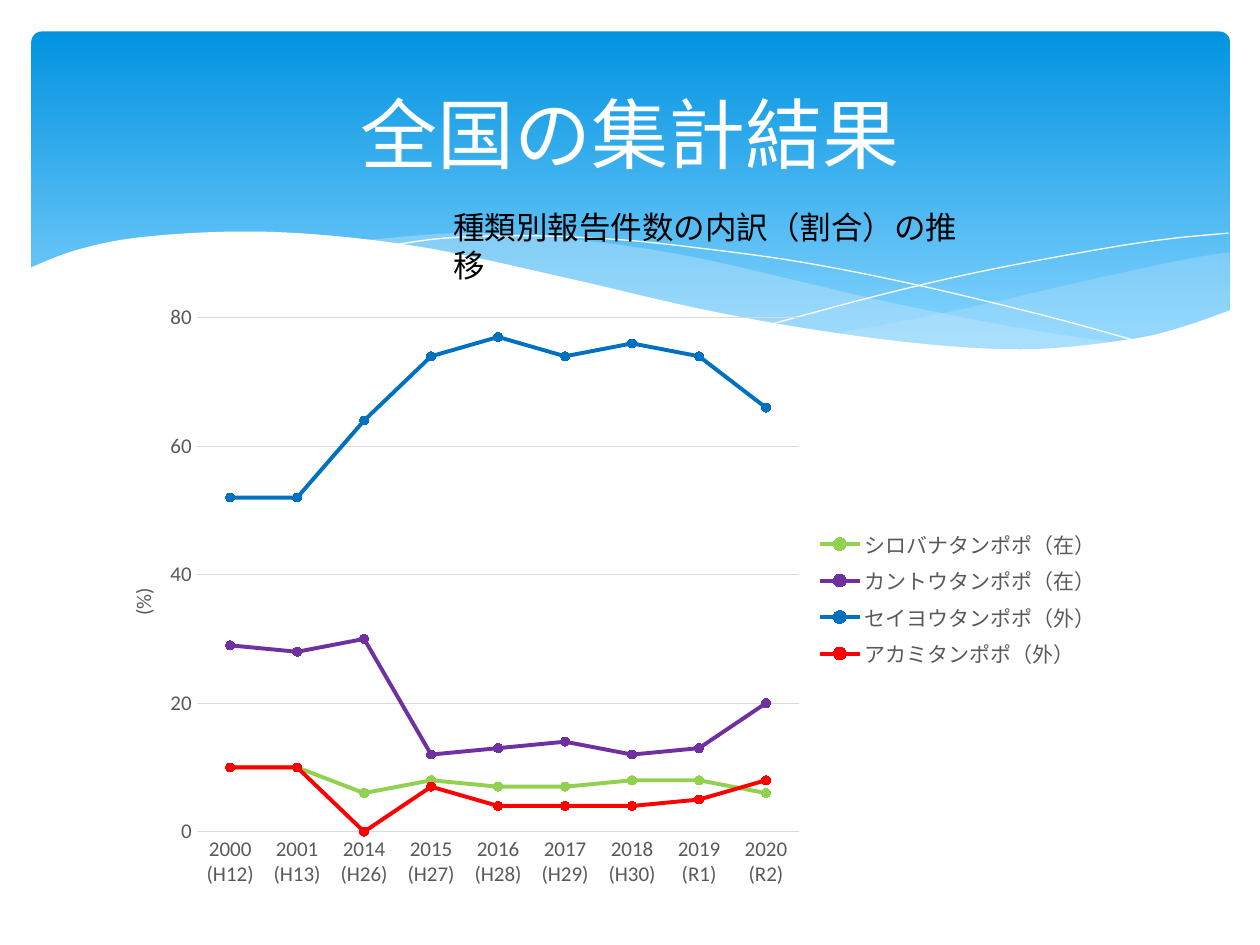
from lxml import etree
from pptx import Presentation
from pptx.chart.data import CategoryChartData
from pptx.dml.color import RGBColor
from pptx.enum.chart import XL_CHART_TYPE, XL_LEGEND_POSITION, XL_MARKER_STYLE, XL_TICK_MARK
from pptx.enum.shapes import MSO_SHAPE
from pptx.enum.text import MSO_ANCHOR, PP_ALIGN
from pptx.oxml import parse_xml
from pptx.oxml.ns import nsdecls, qn
from pptx.util import Inches, Pt

THEME = {
    "font": "Calibri",
    "title_size": Pt(44), "subtitle_size": Pt(18), "chart_size": Pt(12),
    "white": RGBColor.from_string("FFFFFF"), "black": RGBColor.from_string("000000"),
    "sky_top": RGBColor.from_string("0293E0"), "sky_bottom": RGBColor.from_string("83D3FE"),
    "wave": RGBColor.from_string("C6E7FC"),
    "label": RGBColor.from_string("595959"), "grid": RGBColor.from_string("D9D9D9"),
}

presentation = Presentation()
presentation.slide_width, presentation.slide_height = Inches(10), Inches(7.5)
slide = presentation.slides.add_slide(presentation.slide_layouts[6])

# Grid of 10 columns by 7.5 rows
column = presentation.slide_width / 10
row = presentation.slide_height / 7.5


def place(left, top, width, height):
    return [round(value * unit) for value, unit in zip((left, top, width, height), (column, row) * 2)]


def smooth(knots, steps=6):
    """Catmull-Rom curve through the knots, in slide units."""
    padded = [knots[0], *knots, knots[-1]]
    points = []
    for a, b, c, d in zip(padded, padded[1:], padded[2:], padded[3:]):
        for t in (step / steps for step in range(steps)):
            points.append([
                (2 * q + (r - p) * t + (2 * p - 5 * q + 4 * r - s) * t ** 2
                 + (3 * q - p - 3 * r + s) * t ** 3) / 2
                for p, q, r, s in zip(a, b, c, d)])
    return [(round(x * column), round(y * row)) for x, y in [*points, knots[-1]]]


# Gradient banner
banner = slide.shapes.add_shape(MSO_SHAPE.ROUNDED_RECTANGLE, *place(0.25, 0.25, 9.51, 2.7))
banner.adjustments[0] = 0.03
banner.shadow.inherit = False
banner.line.fill.background()
banner.fill.gradient()
banner.fill.gradient_angle = 270
for stop, color, position in zip(banner.fill.gradient_stops, ("sky_top", "sky_bottom"), (0, 0.9)):
    stop.color.rgb, stop.position = THEME[color], position

# Waves: each outline is a chain of curves; no fill means a thin white line
waves = [
    {"fill": "wave", "alpha": 29, "curves": [
        [(9.76, 2), (9.35, 2.07), (8.61, 2.23), (7.79, 2.42), (7.06, 2.57), (6.61, 2.65)],
        [(6.61, 2.65), (7.19, 2.72), (7.69, 2.77), (8.14, 2.78), (8.63, 2.75),
         (9.13, 2.67), (9.49, 2.57), (9.76, 2.47)]]},
    {"fill": "wave", "alpha": 40, "curves": [
        [(8.93, 2.73), (8.07, 2.6), (7.06, 2.4), (6.29, 2.22), (5.55, 2.05), (4.89, 1.94),
         (4.2, 1.87), (3.61, 1.85), (2.86, 1.91)],
        [(2.86, 1.91), (3.62, 2.03), (4.49, 2.22), (5.3, 2.4), (6.01, 2.55), (6.8, 2.68),
         (7.48, 2.76), (8.07, 2.78), (8.57, 2.77), (8.93, 2.73)]]},
    {"fill": None, "curves": [
        [(3.09, 1.95), (3.53, 1.89), (4.16, 1.87), (4.89, 1.9), (5.56, 1.97), (6.36, 2.08),
         (7.27, 2.26), (8.31, 2.51), (9.07, 2.72)]]},
    {"fill": None, "curves": [
        [(6.13, 2.57), (6.95, 2.35), (7.76, 2.16), (8.66, 1.99), (9.24, 1.9), (9.75, 1.85)]]},
    {"fill": "white", "alpha": 100, "curves": [
        [(0.23, 2.13), (0.59, 1.99), (1.06, 1.89), (1.77, 1.84), (2.5, 1.86), (3.4, 1.97),
         (4.47, 2.2), (5.55, 2.45), (6.48, 2.62), (7.44, 2.74), (8.23, 2.77), (8.99, 2.69),
         (9.4, 2.59), (9.77, 2.46)],
        [(9.77, 3.29), (0.23, 3.29)]]},
]
for wave in waves:
    points = [point for curve in wave["curves"] for point in smooth(curve)]
    builder = slide.shapes.build_freeform(*points[0])
    builder.add_line_segments(points[1:], close=wave["fill"] is not None)
    shape = builder.convert_to_shape()
    shape.shadow.inherit = False
    if wave["fill"]:
        shape.fill.solid()
        shape.fill.fore_color.rgb = THEME[wave["fill"]]
        shape.line.fill.background()
        color = shape.fill._xPr.find(qn("a:solidFill"))[0]
        etree.SubElement(color, qn("a:alpha"), val=str(wave["alpha"] * 1000))
    else:
        shape.fill.background()
        shape.line.color.rgb = THEME["white"]
        shape.line.width = Pt(0)

# Line chart
data = CategoryChartData(number_format="0")
data.categories = [
    f"{year}\n({era})" for year, era in (
        (2000, "H12"), (2001, "H13"), (2014, "H26"), (2015, "H27"), (2016, "H28"),
        (2017, "H29"), (2018, "H30"), (2019, "R1"), (2020, "R2"))]
dandelions = [
    ("シロバナタンポポ（在）", "92D050", (10, 10, 6, 8, 7, 7, 8, 8, 6)),
    ("カントウタンポポ（在）", "7030A0", (29, 28, 30, 12, 13, 14, 12, 13, 20)),
    ("セイヨウタンポポ（外）", "0070C0", (52, 52, 64, 74, 77, 74, 76, 74, 66)),
    ("アカミタンポポ（外）", "FF0000", (10, 10, 0, 7, 4, 4, 4, 5, 8)),
]
for name, _, values in dandelions:
    data.add_series(name, values)
chart = slide.shapes.add_chart(
    XL_CHART_TYPE.LINE_MARKERS, *place(0.75, 2.33, 8.11, 4.8), data).chart
chart.has_title = False
chart.has_legend = True
chart.legend.position = XL_LEGEND_POSITION.RIGHT
chart.legend.include_in_layout = False
chart.plots[0].vary_by_categories = False

for series, (_, color, _) in zip(chart.plots[0].series, dandelions):
    rgb = RGBColor.from_string(color)
    series.smooth = False
    series.format.line.color.rgb = rgb
    series.format.line.width = Pt(2.25)
    series.marker.style, series.marker.size = XL_MARKER_STYLE.CIRCLE, 5
    series.marker.format.fill.solid()
    series.marker.format.fill.fore_color.rgb = rgb
    series.marker.format.line.color.rgb = rgb

# Axes and legend
category_axis, value_axis = chart.category_axis, chart.value_axis
for key, value in {"minimum_scale": 0, "maximum_scale": 80, "major_unit": 20,
                   "has_major_gridlines": True}.items():
    setattr(value_axis, key, value)
for axis in (category_axis, value_axis):
    axis.major_tick_mark = axis.minor_tick_mark = XL_TICK_MARK.NONE
for line in (category_axis.format.line, value_axis.major_gridlines.format.line):
    line.color.rgb, line.width = THEME["grid"], Pt(0.75)
value_axis.format.line.fill.background()

title_frame = value_axis.axis_title.text_frame
title_frame.text = "(%)"
for key, value in {"rot": "-5400000", "vert": "horz"}.items():
    title_frame._txBody.bodyPr.set(key, value)
for font in (chart.font, category_axis.tick_labels.font, value_axis.tick_labels.font,
             chart.legend.font, title_frame.paragraphs[0].runs[0].font):
    font.name, font.size, font.bold = THEME["font"], THEME["chart_size"], False
    font.color.rgb = THEME["label"]

# Chart parts at shares of the chart's size, on a clear background
layouts = [
    (chart._chartSpace.chart.plotArea, 0, {"x": 0.1, "y": 0.04, "w": 0.59, "h": 0.85}),
    (chart.legend._element, 1, {"x": 0.71, "y": 0.38, "w": 0.27, "h": 0.25}),
    (value_axis.axis_title._element, 1, {"x": 0.03, "y": 0.48}),
]
for element, index, shares in layouts:
    for old in element.findall(qn("c:layout")):
        element.remove(old)
    inner = '<c:layoutTarget val="inner"/>' if index == 0 else ""
    modes = "".join(f'<c:{key}Mode val="edge"/>' for key in "xy")
    sizes = "".join(f'<c:{key} val="{value}"/>' for key, value in shares.items())
    element.insert(index, parse_xml(
        f'<c:layout {nsdecls("c")}><c:manualLayout>{inner}{modes}{sizes}</c:manualLayout></c:layout>'))
chart._chartSpace.chart.addnext(parse_xml(
    f'<c:spPr {nsdecls("c", "a")}><a:noFill/><a:ln><a:noFill/></a:ln></c:spPr>'))

# Title and subtitle
texts = [
    ("全国の集計結果", (0.5, 0.37, 9, 1.37), "title_size", "white", PP_ALIGN.CENTER, MSO_ANCHOR.MIDDLE),
    ("種類別報告件数の内訳（割合）の推移", (3.5, 1.6, 4.21, 0.4), "subtitle_size", "black",
     PP_ALIGN.LEFT, MSO_ANCHOR.TOP),
]
for text, box, size, color, alignment, anchor in texts:
    frame = slide.shapes.add_textbox(*place(*box)).text_frame
    frame.word_wrap, frame.vertical_anchor = True, anchor
    paragraph = frame.paragraphs[0]
    paragraph.text, paragraph.alignment = text, alignment
    font = paragraph.runs[0].font
    font.name, font.size, font.color.rgb = THEME["font"], THEME[size], THEME[color]

presentation.save("out.pptx")
